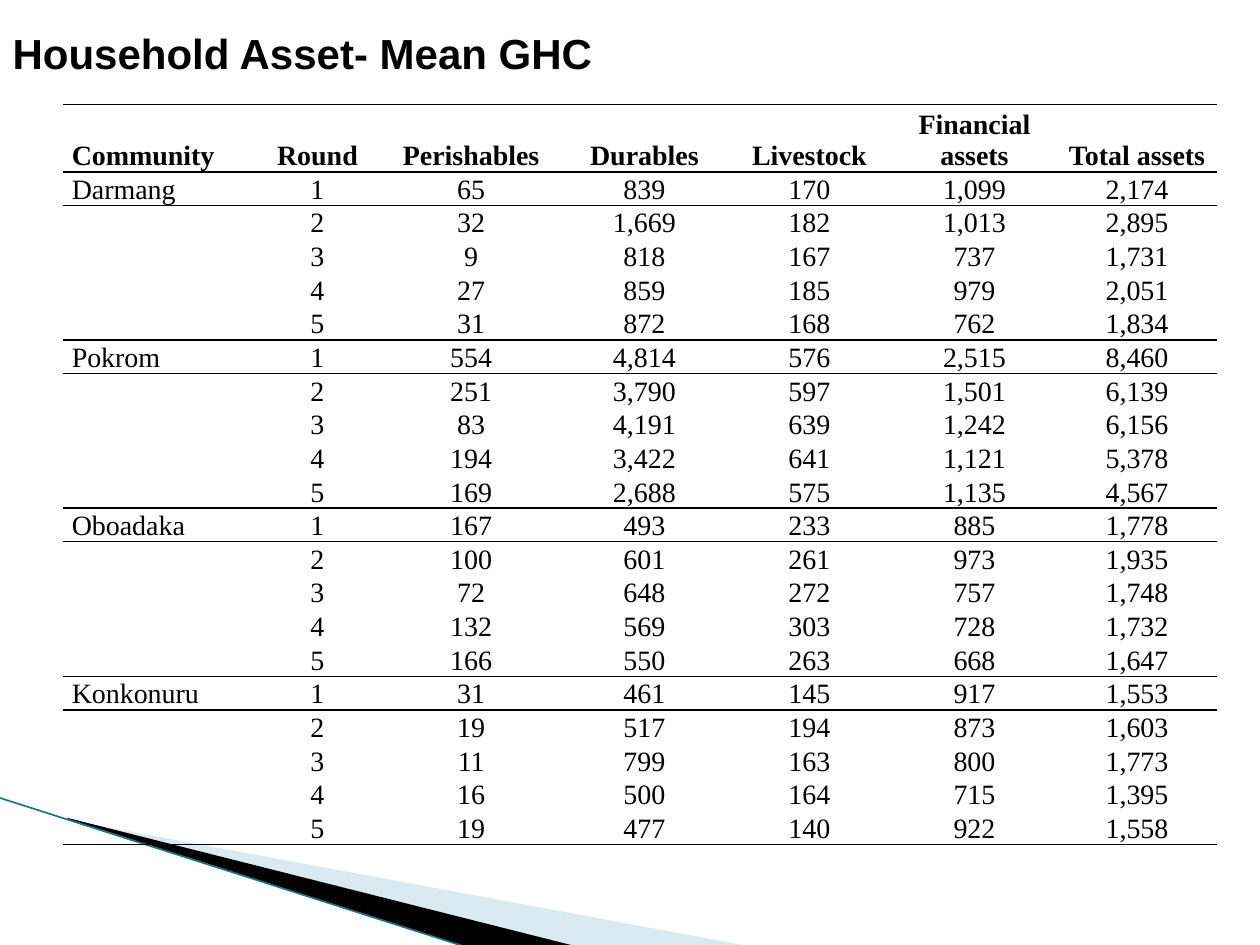
"""Build the household asset slide with its table of mean values."""
from lxml import etree
from pptx import Presentation
from pptx.dml.color import RGBColor
from pptx.enum.shapes import MSO_CONNECTOR
from pptx.enum.text import MSO_ANCHOR, MSO_AUTO_SIZE, PP_ALIGN
from pptx.oxml.ns import qn
from pptx.util import Inches, Pt

LEFT, CENTER = PP_ALIGN.LEFT, PP_ALIGN.CENTER
MIDDLE, BOTTOM = MSO_ANCHOR.MIDDLE, MSO_ANCHOR.BOTTOM
GROW = MSO_AUTO_SIZE.SHAPE_TO_FIT_TEXT
STRAIGHT = MSO_CONNECTOR.STRAIGHT
NO_STYLE = "{2D5ABB26-0587-4C30-8999-92F81FD0307C}"
TITLE_ONLY = 5

HEADERS = ["Community", "Round", "Perishables", "Durables", "Livestock",
           "Financial\nassets", "Total assets"]
COL_WIDTHS = [1.52, 1, 1.44, 1.31, 1.31, 1.31, 1.27]
COMMUNITIES = {
    "Darmang": [
        ("65", "839", "170", "1,099", "2,174"),
        ("32", "1,669", "182", "1,013", "2,895"),
        ("9", "818", "167", "737", "1,731"),
        ("27", "859", "185", "979", "2,051"),
        ("31", "872", "168", "762", "1,834"),
    ],
    "Pokrom": [
        ("554", "4,814", "576", "2,515", "8,460"),
        ("251", "3,790", "597", "1,501", "6,139"),
        ("83", "4,191", "639", "1,242", "6,156"),
        ("194", "3,422", "641", "1,121", "5,378"),
        ("169", "2,688", "575", "1,135", "4,567"),
    ],
    "Oboadaka": [
        ("167", "493", "233", "885", "1,778"),
        ("100", "601", "261", "973", "1,935"),
        ("72", "648", "272", "757", "1,748"),
        ("132", "569", "303", "728", "1,732"),
        ("166", "550", "263", "668", "1,647"),
    ],
    "Konkonuru": [
        ("31", "461", "145", "917", "1,553"),
        ("19", "517", "194", "873", "1,603"),
        ("11", "799", "163", "800", "1,773"),
        ("16", "500", "164", "715", "1,395"),
        ("19", "477", "140", "922", "1,558"),
    ],
}


def rgb(value):
    return RGBColor.from_string(value)


class SlideBuilder:
    """Hold the style and the current slide, and add elements to it."""

    title_font, table_font = "Arial", "Times New Roman"
    title_size, table_size = 24, 16
    ink, pale, teal = "000000", "A0CBDC", "1B7587"

    def __init__(self, slide):
        self.slide = slide

    def format_text(self, p, font, size, bold, align):
        p.alignment = align
        for r in p.runs:
            r.font.name, r.font.size, r.font.bold = font, Pt(size), bold
            r.font.color.rgb = rgb(self.ink)

    def title(self, text, left, top, width, height):
        sp = self.slide.shapes.title
        sp.left, sp.top = Inches(left), Inches(top)
        sp.width, sp.height = Inches(width), Inches(height)
        tf = sp.text_frame
        tf.text = text
        tf.word_wrap, tf.auto_size = True, GROW
        tf.vertical_anchor = MIDDLE
        self.format_text(tf.paragraphs[0], self.title_font, self.title_size,
                         True, LEFT)

    def polygon(self, points, color, opacity=100):
        start, *rest = [(Inches(x), Inches(y)) for x, y in points]
        builder = self.slide.shapes.build_freeform(*start)
        builder.add_line_segments(rest, close=True)
        sp = builder.convert_to_shape()
        sp.shadow.inherit = False
        sp.line.fill.background()
        sp.fill.solid()
        sp.fill.fore_color.rgb = rgb(color)
        if opacity < 100:
            clr = sp.fill._xPr.find(".//" + qn("a:srgbClr"))
            etree.SubElement(clr, qn("a:alpha"), val=str(opacity * 1000))

    def line(self, x1, y1, x2, y2, color, width):
        sp = self.slide.shapes.add_connector(
            STRAIGHT, Inches(x1), Inches(y1), Inches(x2), Inches(y2))
        sp.line.color.rgb = rgb(color)
        sp.line.width = Pt(width)
        etree.SubElement(sp._element.spPr, qn("a:effectLst"))

    def border(self, cell, side):
        ln = etree.SubElement(cell._tc.get_or_add_tcPr(), qn("a:" + side),
                              w=str(Pt(1)))
        fill = etree.SubElement(ln, qn("a:solidFill"))
        etree.SubElement(fill, qn("a:srgbClr"), val=self.ink)

    def cell(self, cell, text, bold, align, sides):
        for side in sides:
            self.border(cell, side)
        cell.fill.background()
        cell.margin_left = cell.margin_right = Inches(0.07)
        cell.margin_top = cell.margin_bottom = 0
        cell.vertical_anchor = BOTTOM
        cell.text_frame.text = text
        for p in cell.text_frame.paragraphs:
            self.format_text(p, self.table_font, self.table_size, bold, align)
            if not text:
                end = p._p.get_or_add_endParaRPr()
                end.set("sz", str(self.table_size * 100))

    def table(self, rows, widths, group_size, left, top, height):
        frame = self.slide.shapes.add_table(
            len(rows), len(widths), Inches(left), Inches(top),
            Inches(sum(widths)), Inches(height))
        table = frame.table
        table.first_row = table.horz_banding = False
        table._tbl.tblPr.find(qn("a:tableStyleId")).text = NO_STYLE
        for column, width in zip(table.columns, widths):
            column.width = Inches(width)
        unit = Inches(height / (len(rows) + 1))
        for i, values in enumerate(rows):
            header = i == 0
            table.rows[i].height = unit * 2 if header else unit
            sides = []
            if header or i % group_size == 1:
                sides.append("lnT")
            if i % group_size == 0:
                sides.append("lnB")
            for j, text in enumerate(values):
                self.cell(table.cell(i, j), text, header,
                          CENTER if j else LEFT, sides)


def main():
    prs = Presentation()
    prs.slide_width, prs.slide_height = Inches(10), Inches(7.5)
    slide = prs.slides.add_slide(prs.slide_layouts[TITLE_ONLY])
    builder = SlideBuilder(slide)

    builder.polygon([(0.55, 6.51), (5.95, 7.51), (4.56, 7.51), (0.55, 6.5)],
                    builder.pale, 40)
    builder.polygon([(0.53, 6.49), (4.57, 7.51), (3.72, 7.52), (0.54, 6.5)],
                    builder.ink)
    builder.line(-0.01, 6.33, 3.71, 7.52, builder.teal, 0.95)
    builder.title("Household Asset- Mean GHC", 0, 0.17, 9.58, 0.5)

    rows = [HEADERS]
    for name, rounds in COMMUNITIES.items():
        for number, values in enumerate(rounds, 1):
            rows.append([name if number == 1 else "", str(number), *values])
    builder.table(rows, COL_WIDTHS, 5, 0.5, 0.83, 5.87)

    prs.save("out.pptx")


if __name__ == "__main__":
    main()
